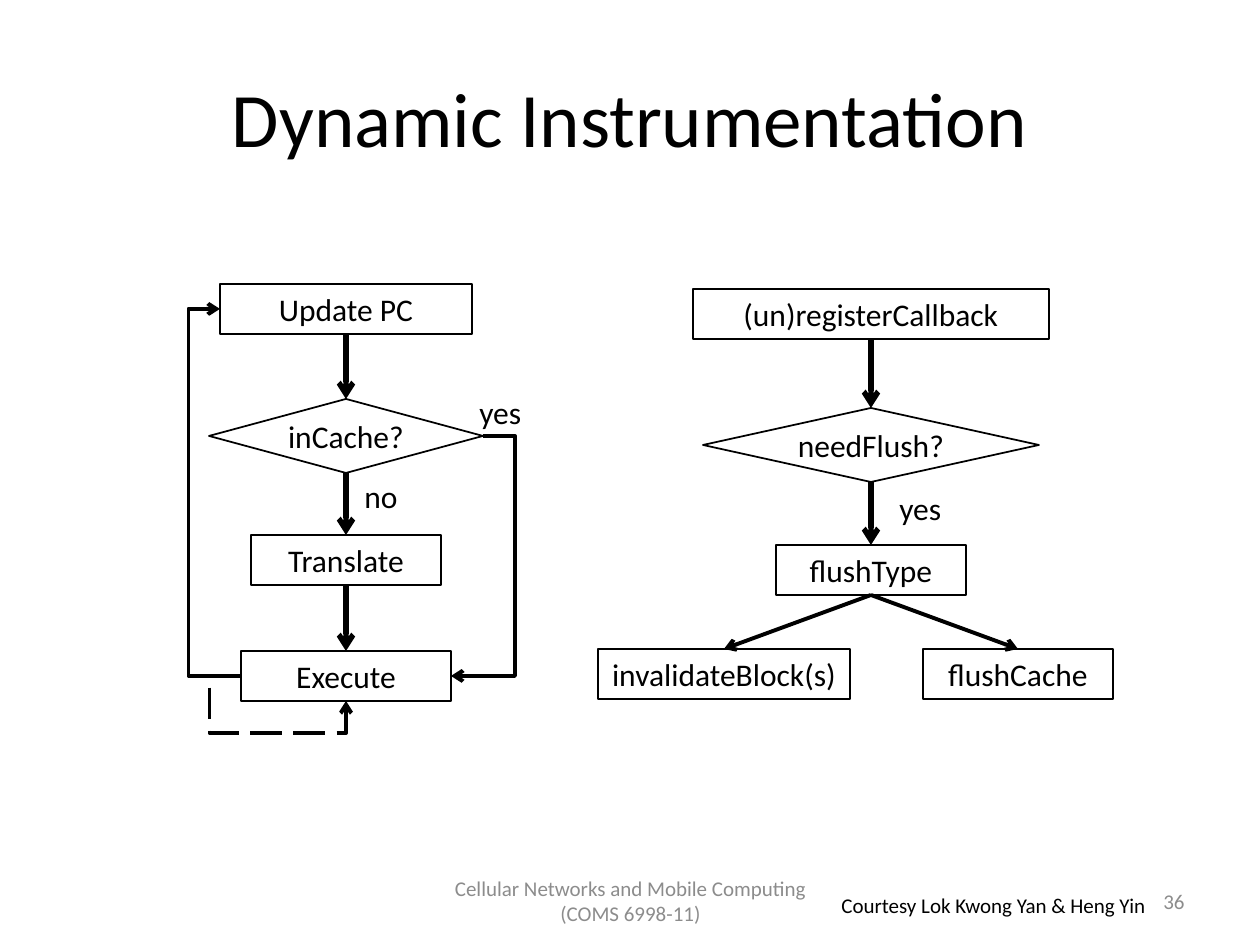
from lxml import etree
from pptx import Presentation
from pptx import util as u
from pptx.dml.color import RGBColor
from pptx.enum import dml, shapes, text
from pptx.oxml import ns

PX = u.Inches(1) // 126
BLACK = RGBColor(0, 0, 0)
WHITE = RGBColor(255, 255, 255)
GRAY = RGBColor(0x8C, 0x8C, 0x8C)
RECT = shapes.MSO_SHAPE.RECTANGLE
TEST = shapes.MSO_SHAPE.FLOWCHART_DECISION
LEFT, MID, RIGHT = text.PP_ALIGN.LEFT, text.PP_ALIGN.CENTER, text.PP_ALIGN.RIGHT

deck = Presentation()
deck.slide_width, deck.slide_height = u.Inches(10), u.Inches(7.5)
slide = deck.slides.add_slide(deck.slide_layouts[6])


def put(kind, words, x, y, w, h, size=18, color=BLACK, align=MID, middle=False):
    area = [n * PX for n in (x, y, w, h)]
    if kind is None:
        item = slide.shapes.add_textbox(*area)
    else:
        item = slide.shapes.add_shape(kind, *area)
        item.shadow.inherit = False
        item.line.color.rgb = BLACK
        item.line.width = u.Pt(1 if kind == TEST else 0.75)
        item.fill.background()
    frame = item.text_frame
    frame.word_wrap = True
    frame.vertical_anchor = text.MSO_ANCHOR.MIDDLE if middle else text.MSO_ANCHOR.TOP
    if kind == TEST:
        item.fill.solid()
        item.fill.fore_color.rgb = WHITE
        frame.margin_left = frame.margin_right = 0
        frame.margin_top = frame.margin_bottom = 0
    para = frame.paragraphs[0]
    para.alignment = align
    run = para.add_run()
    run.text = words
    run.font.name = "Calibri"
    run.font.size = u.Pt(size)
    run.font.color.rgb = color
    return item


def wire(kind, x1, y1, x2, y2, width):
    line = slide.shapes.add_connector(kind, x1 * PX, y1 * PX, x2 * PX, y2 * PX)
    line.line.color.rgb = BLACK
    line.line.width = u.Pt(width)
    props = line._element.spPr
    etree.SubElement(props.find(ns.qn("a:ln")), ns.qn("a:tailEnd"), type="arrow")
    etree.SubElement(props, ns.qn("a:effectLst"))
    return line


put(None, "Dynamic Instrumentation", 63, 38, 1134, 157, 44, middle=True)
put(None, "36", 903, 876, 294, 50, 12, GRAY, RIGHT, True)

nodes = {}
for kind, words, mid, y, w in [
    (RECT, "Update PC", 346, 284, 252),
    (TEST, "inCache?", 346, 399, 274),
    (RECT, "Translate", 346, 535, 190),
    (RECT, "Execute", 346, 651, 210),
    (RECT, "(un)registerCallback", 871, 289, 356),
    (TEST, "needFlush?", 871, 408, 336),
    (RECT, "flushType", 871, 545, 190),
    (RECT, "invalidateBlock(s)", 724, 649, 252),
    (RECT, "flushCache", 1018, 649, 190),
]:
    high = 74 if kind == TEST else 50
    nodes[words] = put(kind, words, mid - w // 2, y, w, high, middle=kind == TEST)

for start, end, width in [
    ("Update PC", "inCache?", 3),
    ("inCache?", "Translate", 3),
    ("Translate", "Execute", 3),
    ("(un)registerCallback", "needFlush?", 3),
    ("needFlush?", "flushType", 3),
    ("flushType", "invalidateBlock(s)", 2.25),
    ("flushType", "flushCache", 2.25),
]:
    line = wire(shapes.MSO_CONNECTOR.STRAIGHT, 0, 0, 0, 0, width)
    line.begin_connect(nodes[start], 2)
    line.end_connect(nodes[end], 0)

for x1, y1, x2, y2, form, bends, dash in [
    (241, 676, 220, 309, "bentConnector3", [250000], False),
    (241, 676, 346, 701, "bentConnector4", [-30000, 228000], True),
    (483, 436, 451, 676, "bentConnector3", [-100000], False),
]:
    line = wire(shapes.MSO_CONNECTOR.ELBOW, x1, y1, x2, y2, 2.25)
    if dash:
        line.line.dash_style = dml.MSO_LINE.LONG_DASH
    geom = line._element.spPr.find(ns.qn("a:prstGeom"))
    geom.set("prst", form)
    guides = geom.find(ns.qn("a:avLst"))
    for rank, bend in enumerate(bends, 1):
        etree.SubElement(guides, ns.qn("a:gd"), name=f"adj{rank}", fmla=f"val {bend}")

for words, x, y in [("yes", 467, 387), ("no", 352, 471), ("yes", 887, 483)]:
    put(None, words, x, y, 78, 50, align=LEFT)

put(None, "Cellular Networks and Mobile Computing (COMS 6998-11)",
    431, 876, 399, 50, 12, GRAY, middle=True)
thanks = put(None, "Courtesy Lok Kwong Yan & Heng Yin", 829, 886, 336, 38, 12, align=LEFT)
thanks.text_frame.word_wrap = False

deck.save("out.pptx")
